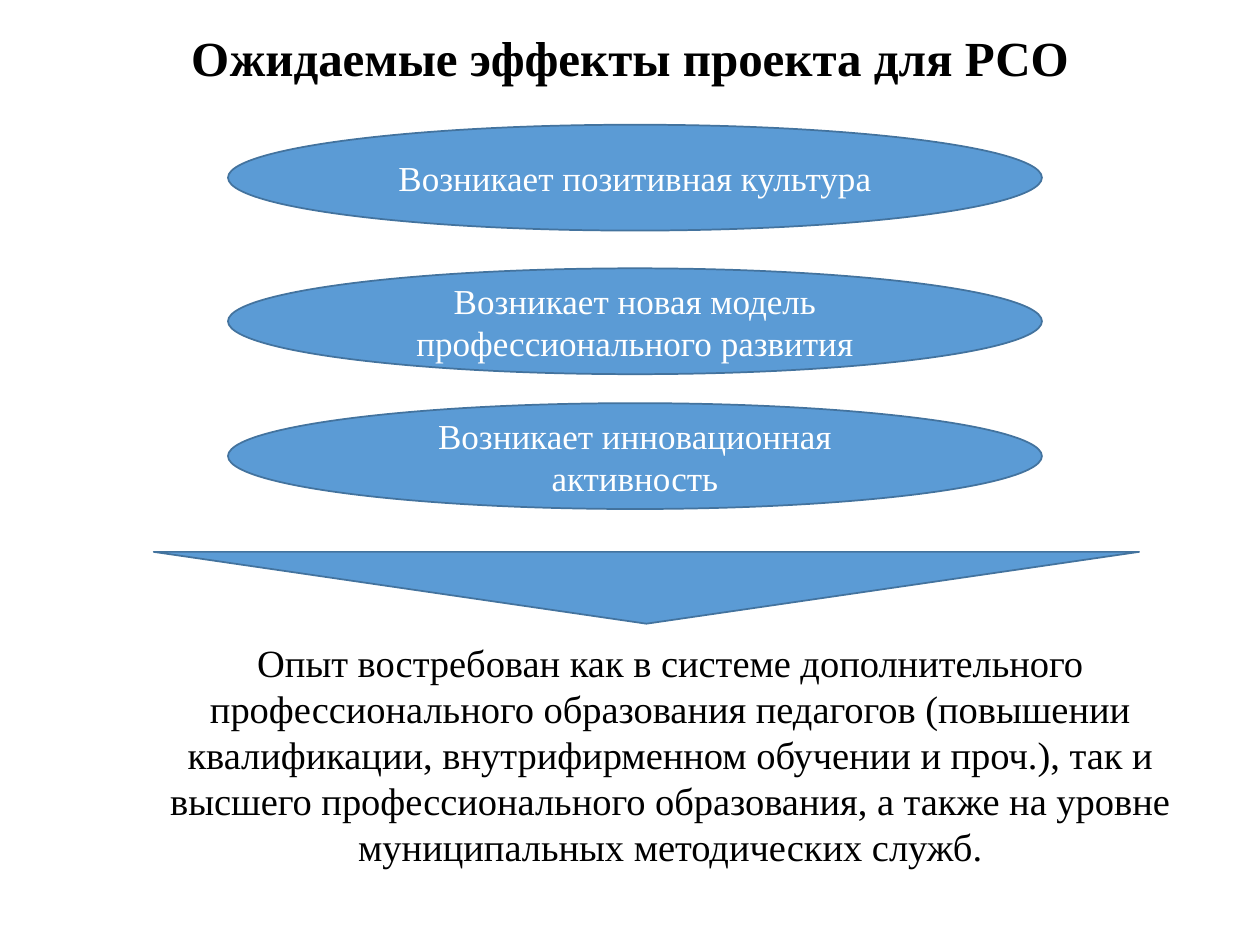
from pptx import Presentation
from pptx.dml.color import RGBColor
from pptx.enum.shapes import MSO_SHAPE
from pptx.enum.text import MSO_ANCHOR, PP_ALIGN
from pptx.util import Inches, Pt

ELLIPSE = MSO_SHAPE.OVAL
TRIANGLE = MSO_SHAPE.ISOSCELES_TRIANGLE
CENTER = PP_ALIGN.CENTER
TOP, MIDDLE, BOTTOM = MSO_ANCHOR.TOP, MSO_ANCHOR.MIDDLE, MSO_ANCHOR.BOTTOM

FONT = "Times New Roman"
BLUE, OUTLINE, BLACK, WHITE = "5B9BD5", "43739E", "000000", "FFFFFF"

EFFECTS = [
    (0.99, "Возникает позитивная культура"),
    (2.13, "Возникает новая модель профессионального развития"),
    (3.2, "Возникает инновационная активность"),
]
CONCLUSION = (
    "Опыт востребован как в системе дополнительного профессионального "
    "образования педагогов (повышении квалификации, внутрифирменном обучении "
    "и проч.), так и высшего профессионального образования, а также на уровне "
    "муниципальных методических служб."
)


def color(hex_string):
    return RGBColor.from_string(hex_string)


def set_text(sp, text, size, hex_color, anchor, bold=False):
    tf = sp.text_frame
    tf.word_wrap = True
    tf.vertical_anchor = anchor
    tf.text = text
    p = tf.paragraphs[0]
    p.alignment = CENTER
    font = p.runs[0].font
    font.name, font.size, font.bold = FONT, Pt(size), bold
    font.color.rgb = color(hex_color)
    return p


def add_blue_shape(s, kind, x, y, w, h):
    sp = s.shapes.add_shape(kind, Inches(x), Inches(y), Inches(w), Inches(h))
    sp.shadow.inherit = False
    sp.fill.solid()
    sp.fill.fore_color.rgb = color(BLUE)
    sp.line.color.rgb = color(OUTLINE)
    sp.line.width = Pt(1)
    return sp


def add_text_box(s, x, y, w, h):
    return s.shapes.add_textbox(Inches(x), Inches(y), Inches(w), Inches(h))


def add_title(s, x, y, w, h):
    sp = add_text_box(s, x, y, w, h)
    p = set_text(sp, "Ожидаемые эффекты проекта для РСО", 28, BLACK, BOTTOM, bold=True)
    p.line_spacing = 0.9
    tf = sp.text_frame
    tf.margin_left = tf.margin_right = Inches(0.07)
    tf.margin_top = tf.margin_bottom = Inches(0.04)


def add_effects(s, x, w, h):
    for y, text in EFFECTS:
        sp = add_blue_shape(s, ELLIPSE, x, y, w, h)
        set_text(sp, text, 20, WHITE, MIDDLE)


def add_down_pointer(s, x, y, w, h):
    add_blue_shape(s, TRIANGLE, x, y, w, h).rotation = 180


def add_conclusion(s, x, y, w, h):
    set_text(add_text_box(s, x, y, w, h), CONCLUSION, 22, BLACK, TOP)


def main():
    prs = Presentation()
    prs.slide_width, prs.slide_height = Inches(10), Inches(7.5)
    s = prs.slides.add_slide(prs.slide_layouts[6])
    add_title(s, 0.69, 0.15, 8.62, 0.58)
    add_effects(s, 1.81, 6.46, 0.84)
    add_down_pointer(s, 1.22, 4.38, 7.82, 0.57)
    add_conclusion(s, 0.99, 5.02, 8.66, 2.29)
    prs.save("out.pptx")


if __name__ == "__main__":
    main()
